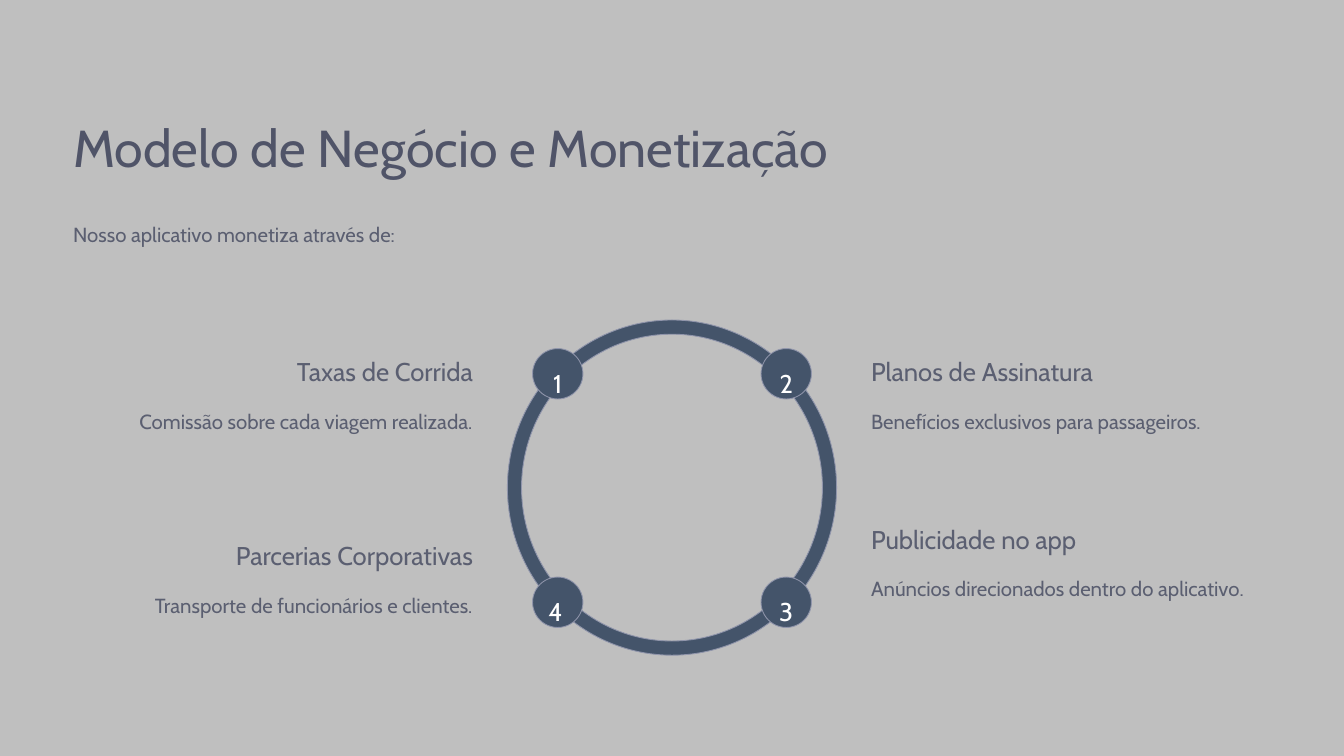
from pptx import Presentation
from pptx.dml.color import RGBColor
from pptx.enum.shapes import MSO_SHAPE
from pptx.enum.text import MSO_ANCHOR, PP_ALIGN
from pptx.util import Pt

DONUT, OVAL = MSO_SHAPE.DONUT, MSO_SHAPE.OVAL
LEFT, CENTER, RIGHT = PP_ALIGN.LEFT, PP_ALIGN.CENTER, PP_ALIGN.RIGHT
TOP, MIDDLE = MSO_ANCHOR.TOP, MSO_ANCHOR.MIDDLE

# Content
TITLE = "Modelo de Negócio e Monetização"
INTRO = "Nosso aplicativo monetiza através de:"
# number, heading, body, column, row, heading top, heading width, body height, digit shift
STREAMS = [
    ("1", "Taxas de Corrida", "Comissão sobre cada viagem realizada.",
     0, 0, 298.8, 223.2, 28.8, 0),
    ("2", "Planos de Assinatura", "Benefícios exclusivos para passageiros.",
     1, 0, 298.8, 223.2, 28.8, 0),
    ("3", "Publicidade no app", "Anúncios direcionados dentro do aplicativo.",
     1, 1, 442, 223.2, 56.9, 0),
    ("4", "Parcerias Corporativas", "Transporte de funcionários e clientes.",
     0, 1, 456.5, 236.9, 28.8, -2),
]

THEME = {
    "font": "Cabin",
    "background": "BFBFBF", "title": "505468", "text": "5B5F71",
    "ring": "44546A", "outline": "9095AB", "number": "FFFFFF",
    "title_size": 44.5, "heading_size": 22, "body_size": 17.5,
}

# Layout, in points
WIDTH, HEIGHT = 1152, 648
MARGIN = 62.64
COLUMN_W = 342.72
BODY_DROP = 38.6
RING = (434.9, 274.3, 282.2, 287.3)
DOT, DOT_X, DOT_Y, DOT_STEP = 43.2, 456.5, 298.8, 195.84
DIGIT_W, DIGIT_H = 14, 36


def color(name):
    return RGBColor.from_string(THEME[name])


def add_text(slide, text, box, size, ink, spacing, align=LEFT, anchor=TOP):
    tf = slide.shapes.add_textbox(*map(Pt, box)).text_frame
    tf.word_wrap = True
    tf.vertical_anchor = anchor
    tf.margin_left = tf.margin_top = tf.margin_right = tf.margin_bottom = 0
    p = tf.paragraphs[0]
    p.text = text
    p.alignment = align
    p.line_spacing = spacing
    p.font.name = THEME["font"]
    p.font.size = Pt(THEME[size])
    p.font.color.rgb = color(ink)


def add_ring_part(slide, kind, box):
    sp = slide.shapes.add_shape(kind, *map(Pt, box))
    sp.shadow.inherit = False
    sp.fill.solid()
    sp.fill.fore_color.rgb = color("ring")
    sp.line.color.rgb = color("outline")
    sp.line.width = Pt(0.75)
    return sp


def add_stream(slide, stream):
    number, heading, body, col, row, top, heading_w, body_h, shift = stream
    x, y = DOT_X + col * DOT_STEP, DOT_Y + row * DOT_STEP
    add_ring_part(slide, OVAL, (x, y, DOT, DOT))
    digit_box = (x + (DOT - DIGIT_W) / 2 + shift, y + (DOT - DIGIT_H) / 2,
                 DIGIT_W, DIGIT_H)
    add_text(slide, number, digit_box, "heading_size", "number", 1.61, CENTER, MIDDLE)

    # Left column hugs the ring on its right edge, right column mirrors it
    left = WIDTH - MARGIN - COLUMN_W if col else MARGIN
    heading_left = left if col else left + COLUMN_W - heading_w
    align = LEFT if col else RIGHT
    add_text(slide, heading, (heading_left, top, heading_w, 28.1),
             "heading_size", "text", 1.25, align)
    add_text(slide, body, (left, top + BODY_DROP, COLUMN_W, body_h),
             "body_size", "text", 1.63, align)


def main():
    prs = Presentation()
    prs.slide_width, prs.slide_height = Pt(WIDTH), Pt(HEIGHT)
    s = prs.slides.add_slide(prs.slide_layouts[6])
    s.background.fill.solid()
    s.background.fill.fore_color.rgb = color("background")

    # Title and introduction
    add_text(s, TITLE, (MARGIN, 85.7, 717.1, 56.2), "title_size", "title", 1.25)
    add_text(s, INTRO, (MARGIN, 177.1, WIDTH - 2 * MARGIN, 28.8),
             "body_size", "text", 1.63)

    # Ring with its four revenue streams
    ring = add_ring_part(s, DONUT, RING)
    ring.adjustments[0] = 0.043
    for stream in STREAMS:
        add_stream(s, stream)

    prs.save("out.pptx")


if __name__ == "__main__":
    main()
